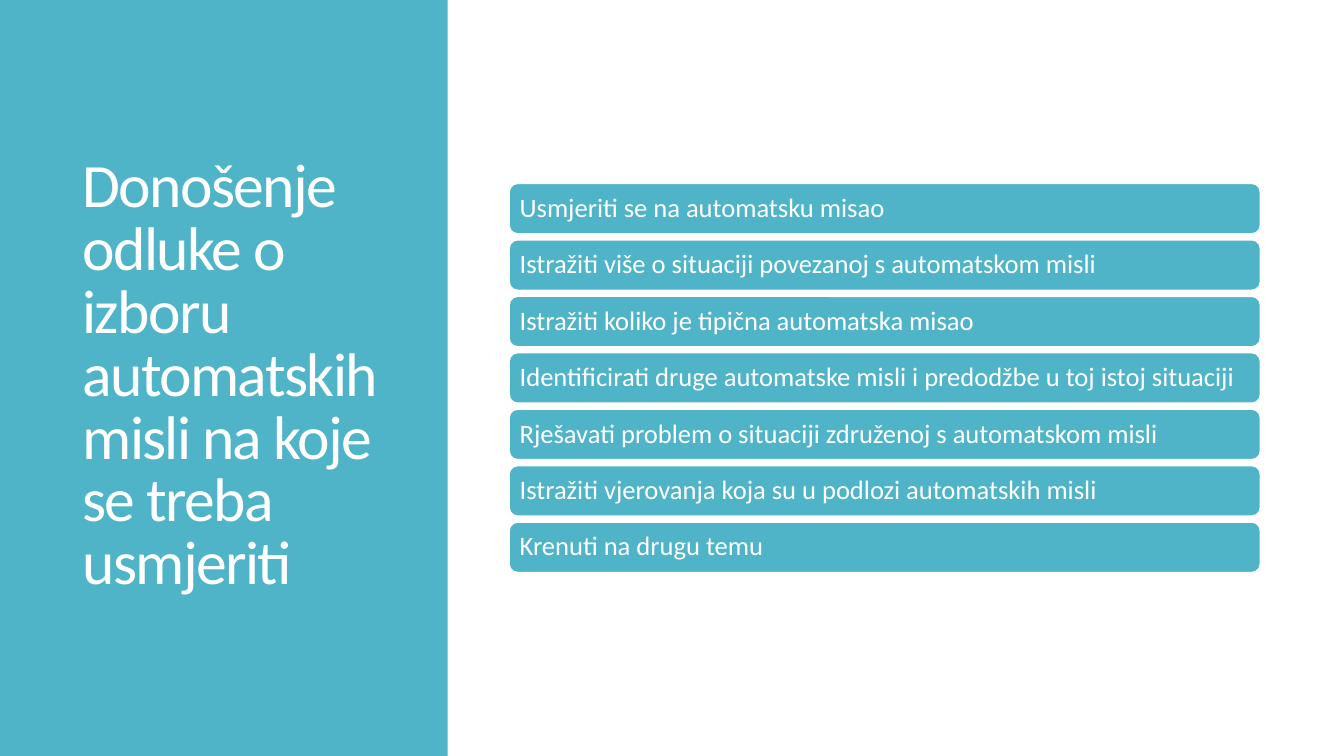
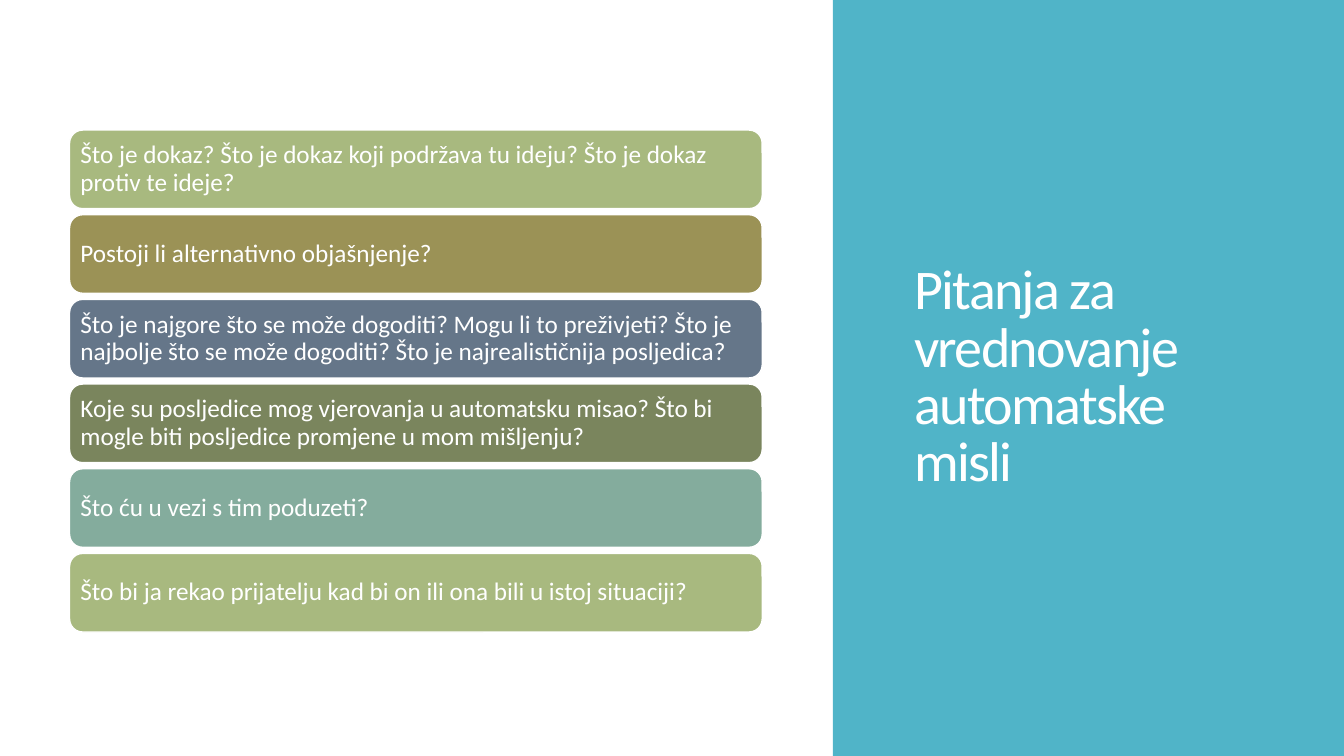
import dataclasses
import itertools

import pptx
import pptx.dml.color
import pptx.enum.shapes
import pptx.enum.text
import pptx.util

Inches = pptx.util.Inches
Pt = pptx.util.Pt
SHAPE = pptx.enum.shapes.MSO_SHAPE


@dataclasses.dataclass(frozen=True)
class Theme:
    font: str = "Calibri"
    white: str = "FFFFFF"
    teal: str = "50B4C8"
    mixed: tuple = ("A8B97F", "9B9256", "657689", "7A855D", "84AC9D")
    wide: float = 13.33
    high: float = 7.5
    title_size: int = 44
    title_small: int = 40
    step_size: int = 19
    query_size: int = 18


THEME = Theme()

STEPS = (
    "Usmjeriti se na automatsku misao",
    "Istražiti više o situaciji povezanoj s automatskom misli",
    "Istražiti koliko je tipična automatska misao",
    "Identificirati druge automatske misli i predodžbe u toj istoj situaciji",
    "Rješavati problem o situaciji združenoj s automatskom misli",
    "Istražiti vjerovanja koja su u podlozi automatskih misli",
    "Krenuti na drugu temu",
)
QUERIES = (
    "Što je dokaz? Što je dokaz koji podržava tu ideju? Što je dokaz protiv te ideje?",
    "Postoji li alternativno objašnjenje?",
    "Što je najgore što se može dogoditi? Mogu li to preživjeti? "
    "Što je najbolje što se može dogoditi? Što je najrealističnija posljedica?",
    "Koje su posljedice mog vjerovanja u automatsku misao? "
    "Što bi mogle biti posljedice promjene u mom mišljenju?",
    "Što ću u vezi s tim poduzeti?",
    "Što bi ja rekao prijatelju kad bi on ili ona bili u istoj situaciji?",
)


def paint(color):
    return pptx.dml.color.RGBColor.from_string(color)


def write(shape, text, *, size, leading, inset, track=None):
    """Fill a shape with left-aligned, middle-anchored text; track is in points."""
    frame = shape.text_frame
    frame.word_wrap = True
    frame.vertical_anchor = pptx.enum.text.MSO_ANCHOR.MIDDLE
    frame.margin_left = frame.margin_right = Inches(inset[0])
    frame.margin_top = frame.margin_bottom = Inches(inset[1])
    para = frame.paragraphs[0]
    para.alignment = pptx.enum.text.PP_ALIGN.LEFT
    para.line_spacing = leading
    run = para.add_run()
    run.text = text
    run.font.name = THEME.font
    run.font.size = Pt(size)
    run.font.color.rgb = paint(THEME.white)
    if track is not None:
        run._r.get_or_add_rPr().set("spc", str(round(track * 100)))


def add_block(slide, kind, box, fill, line=None):
    shape = slide.shapes.add_shape(kind, *map(Inches, box))
    shape.shadow.inherit = False
    shape.fill.solid()
    shape.fill.fore_color.rgb = paint(fill)
    if line:
        shape.line.color.rgb = paint(line)
        shape.line.width = Pt(1)
    else:
        shape.line.fill.background()
    return shape


def add_panel(slide, title, *, left, width, box, size):
    """Draw the full-height band with the slide title on it."""
    add_block(slide, SHAPE.RECTANGLE, (left, 0, width, THEME.high), THEME.teal)
    label = slide.shapes.add_textbox(*map(Inches, box))
    write(label, title, size=size, leading=0.85, inset=(0.1, 0.05), track=-1.2)


def add_bars(slide, texts, *, box, pitch, fills, size, inset):
    """Stack one bar per text from box downwards, cycling through fills."""
    left, top, width, height = box
    for row, (text, fill) in enumerate(zip(texts, itertools.cycle(fills))):
        place = (left, top + row * pitch, width, height)
        bar = add_block(slide, SHAPE.ROUNDED_RECTANGLE, place, fill, THEME.white)
        write(bar, text, size=size, leading=0.9, inset=(inset, inset))


def main():
    deck = pptx.Presentation()
    deck.slide_width = Inches(THEME.wide)
    deck.slide_height = Inches(THEME.high)
    blank = deck.slide_layouts[6]

    slide = deck.slides.add_slide(blank)
    add_panel(slide, "Donošenje odluke o izboru automatskih misli na koje se treba usmjeriti",
              left=0, width=4.44, box=(0.72, 1.02, 3.27, 5.45), size=THEME.title_size)
    add_bars(slide, STEPS, box=(5.05, 1.82, 7.45, 0.5), pitch=0.56,
             fills=(THEME.teal,), size=THEME.step_size, inset=0.08)

    slide = deck.slides.add_slide(blank)
    add_panel(slide, "Pitanja za vrednovanje automatske misli",
              left=8.26, width=5.07, box=(8.97, 0.7, 3.66, 6.11), size=THEME.title_small)
    add_bars(slide, QUERIES, box=(0.69, 1.29, 6.87, 0.78), pitch=0.84,
             fills=THEME.mixed, size=THEME.query_size, inset=0.07)

    deck.save("out.pptx")


if __name__ == "__main__":
    main()
